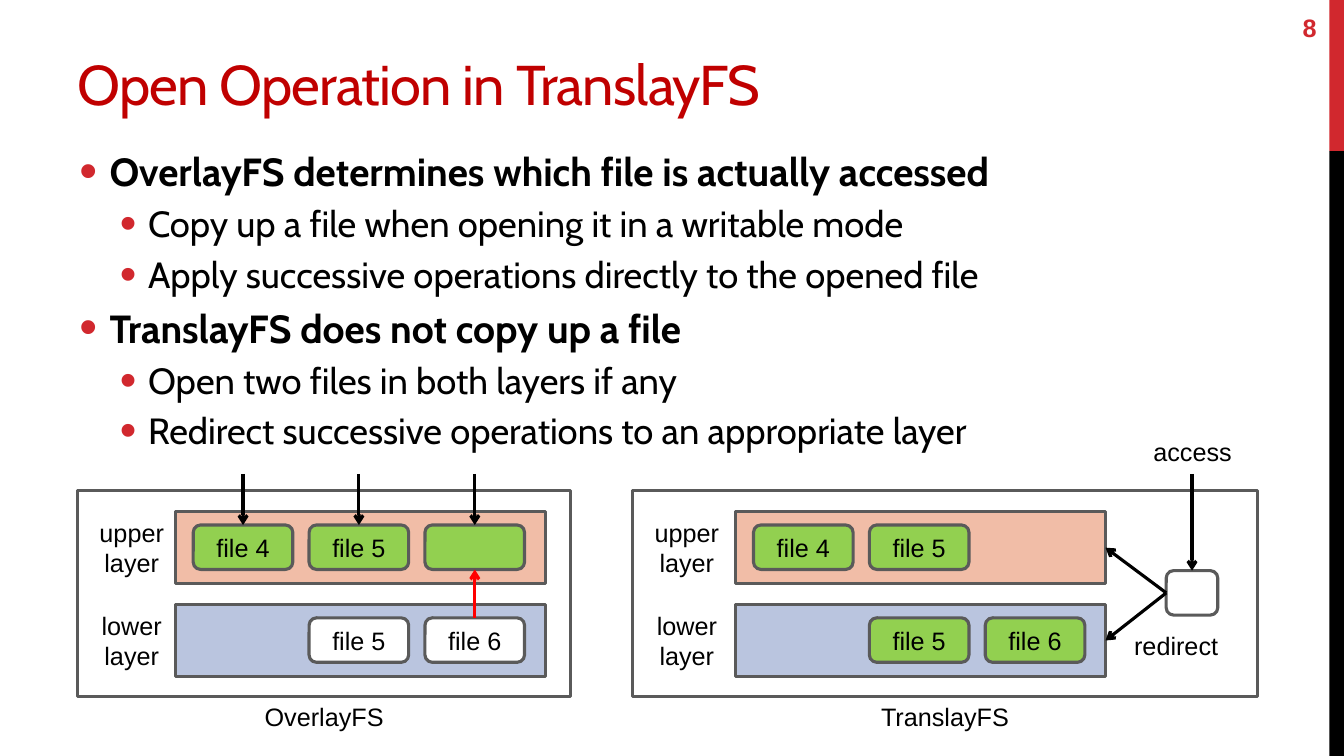
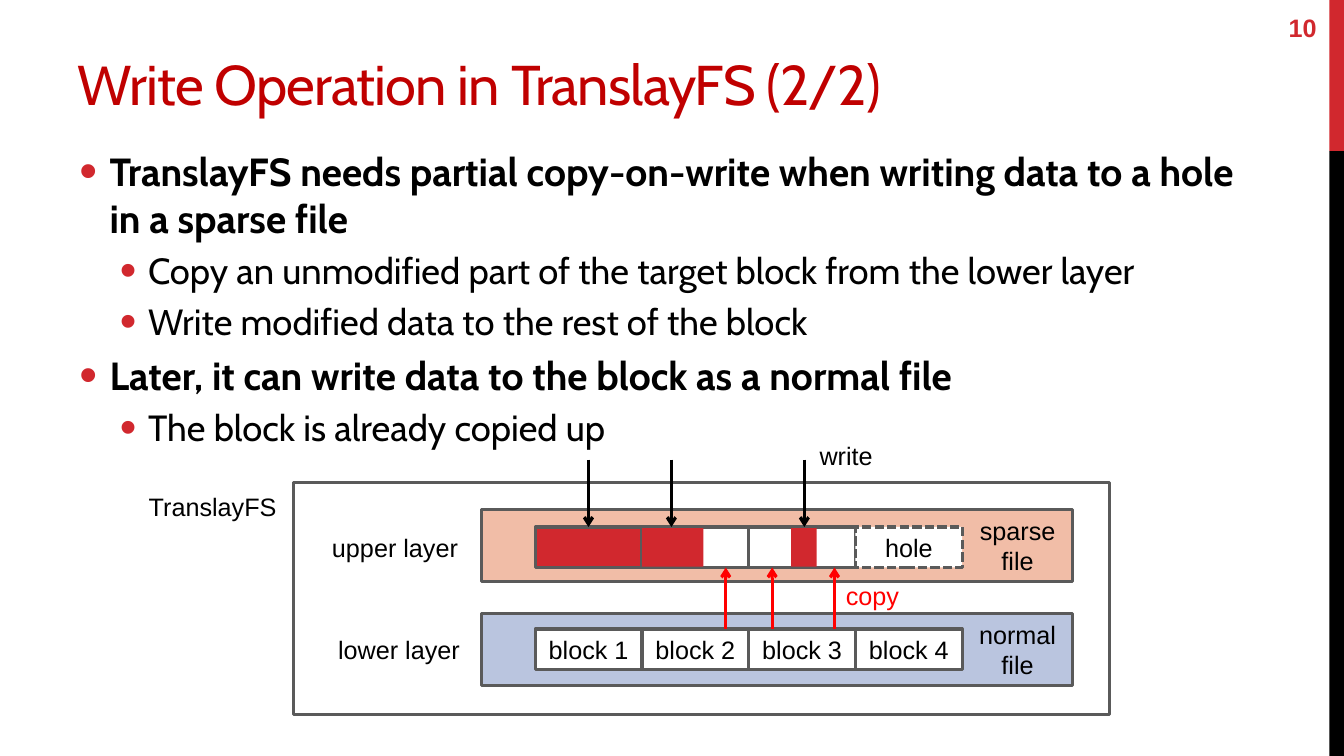
from lxml import etree
from pptx import Presentation
from pptx.dml.color import RGBColor
from pptx.enum.dml import MSO_LINE
from pptx.enum.shapes import MSO_CONNECTOR, MSO_SHAPE
from pptx.enum.text import MSO_ANCHOR, MSO_AUTO_SIZE, PP_ALIGN
from pptx.oxml.ns import qn
from pptx.util import Cm, Pt

RECTANGLE = MSO_SHAPE.RECTANGLE
ROUNDED = MSO_SHAPE.ROUNDED_RECTANGLE
STRAIGHT = MSO_CONNECTOR.STRAIGHT
DASHED = MSO_LINE.SQUARE_DOT
MIDDLE, BOTTOM = MSO_ANCHOR.MIDDLE, MSO_ANCHOR.BOTTOM
CENTER, LEFT, RIGHT = PP_ALIGN.CENTER, PP_ALIGN.LEFT, PP_ALIGN.RIGHT
NO_AUTOFIT = MSO_AUTO_SIZE.NONE

COLORS = {
    "title": "C00000",
    "accent": "D1282E",
    "black": "000000",
    "white": "FFFFFF",
    "outline": "5A5A5A",
    "upper": "F1BDA7",
    "lower": "BAC5DF",
    "file": "92D050",
    "copy": "FF0000",
}
COLORS = {name: RGBColor.from_string(value) for name, value in COLORS.items()}
HEADING_FONT, LABEL_FONT = "Cabin", "Arial"
LINE_WIDTH = Pt(2.25)
LAYER_HEIGHT = 1.8
LABEL_HEIGHT = 1.02

# Per list level: size, bold, space before, text indent, hanging indent
LEVELS = [
    (Pt(28), True, Pt(6), Cm(0.76), Cm(0.76)),
    (Pt(26), False, Pt(5), Cm(1.73), Cm(0.71)),
]

SLIDES = [
    ("8", "Open Operation in TranslayFS", [
        (0, "OverlayFS determines which file is actually accessed"),
        (1, "Copy up a file when opening it in a writable mode"),
        (1, "Apply successive operations directly to the opened file"),
        (0, "TranslayFS does not copy up a file"),
        (1, "Open two files in both layers if any"),
        (1, "Redirect successive operations to an appropriate layer"),
    ]),
    ("10", "Write Operation in TranslayFS (2/2)", [
        (0, "TranslayFS needs partial copy-on-write when writing data to a hole "
            "in a sparse file"),
        (1, "Copy an unmodified part of the target block from the lower layer"),
        (1, "Write modified data to the rest of the block"),
        (0, "Later, it can write data to the block as a normal file"),
        (1, "The block is already copied up"),
    ]),
]


def add_box(slide, left, top, width, height, text="", fill=None,
            outline="outline", kind=RECTANGLE, color="black"):
    """Add a filled shape, or a plain text box when fill is None; lengths in cm."""
    place = Cm(left), Cm(top), Cm(width), Cm(height)
    if fill is None:
        shape = slide.shapes.add_textbox(*place)
    else:
        shape = slide.shapes.add_shape(kind, *place)
        shape.shadow.inherit = False
        shape.fill.solid()
        shape.fill.fore_color.rgb = COLORS[fill]
        if outline:
            shape.line.color.rgb = COLORS[outline]
            shape.line.width = LINE_WIDTH
        else:
            shape.line.fill.background()
    frame = shape.text_frame
    frame.word_wrap = False
    frame.vertical_anchor = MIDDLE
    frame.text = text
    for paragraph in frame.paragraphs:
        paragraph.alignment = CENTER
        for run in paragraph.runs:
            run.font.name = LABEL_FONT
            run.font.size = Pt(18)
            run.font.color.rgb = COLORS[color]
    return shape


def add_arrow(slide, start_x, start_y, end_x, end_y, color="black"):
    connector = slide.shapes.add_connector(
        STRAIGHT, Cm(start_x), Cm(start_y), Cm(end_x), Cm(end_y))
    connector.line.color.rgb = COLORS[color]
    connector.line.width = LINE_WIDTH
    properties = connector.element.spPr
    etree.SubElement(properties.find(qn("a:ln")), qn("a:tailEnd"), type="arrow")
    etree.SubElement(properties, qn("a:effectLst"))


presentation = Presentation()
presentation.slide_width, presentation.slide_height = Cm(33.87), Cm(19.05)

# Shared layout: title and body positions
layout = presentation.slide_layouts[1]
for placeholder in list(layout.placeholders)[2:]:
    layout.shapes.element.remove(placeholder.element)
for placeholder, top, height in zip(layout.placeholders, (0.43, 3.58), (2.64, 14.45)):
    placeholder.left, placeholder.top = Cm(1.7), Cm(top)
    placeholder.width, placeholder.height = Cm(30.53), Cm(height)

# Titles, lists and page numbers
for number, title, items in SLIDES:
    slide = presentation.slides.add_slide(layout)
    frame = slide.shapes.title.text_frame
    frame.text = title
    frame.auto_size = NO_AUTOFIT
    frame.vertical_anchor = BOTTOM
    paragraph = frame.paragraphs[0]
    paragraph.alignment = LEFT
    run = paragraph.runs[0]
    run.font.name, run.font.size = HEADING_FONT, Pt(40)
    run.font.color.rgb = COLORS["title"]
    run.font._element.set("spc", "-60")

    frame = slide.placeholders[1].text_frame
    frame.auto_size = NO_AUTOFIT
    frame.margin_left = frame.margin_right = Cm(0.3)
    frame.text = "\n".join(text for level, text in items)
    for paragraph, (level, text) in zip(frame.paragraphs, items):
        size, bold, space, indent, hanging = LEVELS[level]
        paragraph.level = level
        paragraph.space_before = space
        properties = paragraph._p.get_or_add_pPr()
        properties.set("marL", str(indent))
        properties.set("indent", str(-hanging))
        bullet_color = etree.SubElement(properties, qn("a:buClr"))
        etree.SubElement(bullet_color, qn("a:srgbClr"), val=str(COLORS["accent"]))
        etree.SubElement(properties, qn("a:buSzPct"), val="130000")
        etree.SubElement(properties, qn("a:buFont"), typeface=LABEL_FONT)
        etree.SubElement(properties, qn("a:buChar"), char="•")
        font = paragraph.runs[0].font
        font.name, font.size, font.bold = HEADING_FONT, size, bold
        font.color.rgb = COLORS["black"]

    page_number = add_box(slide, 30.89, 0.18, 2.54, LABEL_HEIGHT, number, color="accent")
    page_number.text_frame.word_wrap = True
    paragraph = page_number.text_frame.paragraphs[0]
    paragraph.alignment = RIGHT
    paragraph.runs[0].font.bold = True

open_slide, write_slide = presentation.slides

# Side bands are drawn on a slide, then moved into the layout
bands = [
    add_box(open_slide, 33.5, 0, 0.37, 3.81, fill="accent", outline=None),
    add_box(open_slide, 33.5, 3.81, 0.37, 15.24, fill="black", outline=None),
]
for band in bands:
    layout.shapes.element.append(band.element)

# Open operation: two file systems with files in their layers
FILE_WIDTH, FILE_HEIGHT, FILE_STEP = 2.51, 1.12, 2.92
FILE_INSET_X, FILE_INSET_Y = 0.45, 0.33
OPEN_LAYERS = [("upper", 12.9), ("lower", 15.24)]
ARROW_TOP = 11.94
# Files: layer row, column, text, fill
SYSTEMS = [
    ("TranslayFS", 15.93, 15.77, 18.54, 16.23, [
        (0, 0, "file 4", "file"), (0, 1, "file 5", "file"),
        (1, 1, "file 5", "file"), (1, 2, "file 6", "file")]),
    ("OverlayFS", 1.96, 12.42, 4.42, 2.24, [
        (0, 0, "file 4", "file"), (0, 1, "file 5", "file"), (0, 2, "", "file"),
        (1, 1, "file 5", "white"), (1, 2, "file 6", "white")]),
]
for name, left, width, layer_left, label_left, files in SYSTEMS:
    add_box(open_slide, left, 12.37, width, 5.18, fill="white")
    add_box(open_slide, left, 17.55, width, LABEL_HEIGHT, name)
    for layer, top in OPEN_LAYERS:
        add_box(open_slide, layer_left, top, 9.32, LAYER_HEIGHT, fill=layer)
        add_box(open_slide, label_left, top, 2.16, LAYER_HEIGHT, f"{layer}\nlayer")
    for row, column, text, fill in files:
        add_box(open_slide, layer_left + FILE_INSET_X + column * FILE_STEP,
                OPEN_LAYERS[row][1] + FILE_INSET_Y, FILE_WIDTH, FILE_HEIGHT,
                text, fill, kind=ROUNDED)

upper_file_top, lower_file_top = [top + FILE_INSET_Y for layer, top in OPEN_LAYERS]
file_centers = [4.42 + FILE_INSET_X + FILE_WIDTH / 2 + column * FILE_STEP
                for column in range(3)]
for center in file_centers:
    add_arrow(open_slide, center, ARROW_TOP, center, upper_file_top)
add_arrow(open_slide, file_centers[2], lower_file_top,
          file_centers[2], upper_file_top + FILE_HEIGHT, "copy")

add_box(open_slide, 29.39, 14.38, 1.3, FILE_HEIGHT, fill="white", kind=ROUNDED)
add_arrow(open_slide, 30.04, ARROW_TOP, 30.04, 14.38)
for layer, top in OPEN_LAYERS:
    add_arrow(open_slide, 29.39, 14.94, 27.86, top + LAYER_HEIGHT / 2)
add_box(open_slide, 28.32, 15.75, 2.64, LABEL_HEIGHT, "redirect")
add_box(open_slide, 28.8, 10.87, 2.51, LABEL_HEIGHT, "access")

# Write operation: blocks of a sparse file above those of a normal file
BLOCK_LEFT, BLOCK_WIDTH, BLOCK_HEIGHT = 13.49, 2.69, 1.02
UPPER_BLOCK_TOP, LOWER_BLOCK_TOP = 13.28, 15.85
add_box(write_slide, 7.39, 12.17, 20.57, 5.84, fill="white")
add_box(write_slide, 3.48, 12.24, 3.76, LABEL_HEIGHT, "TranslayFS")
WRITE_LAYERS = [
    ("upper", 12.85, 8.1, UPPER_BLOCK_TOP, "sparse"),
    ("lower", 15.47, 8.2, LOWER_BLOCK_TOP, "normal"),
]
for layer, top, label_left, label_top, file_kind in WRITE_LAYERS:
    add_box(write_slide, 12.14, top, 14.88, LAYER_HEIGHT, fill=layer)
    add_box(write_slide, label_left, label_top, 3.71, LABEL_HEIGHT, f"{layer} layer")
    add_box(write_slide, 24.42, top, 2.45, LAYER_HEIGHT, f"{file_kind}\nfile")

upper_blocks = [("", "accent"), ("", "white"), ("", "white"), ("hole", "white")]
for index, (text, fill) in enumerate(upper_blocks):
    left = BLOCK_LEFT + index * BLOCK_WIDTH
    add_box(write_slide, left, LOWER_BLOCK_TOP, BLOCK_WIDTH, BLOCK_HEIGHT,
            f"block {index + 1}", "white")
    block = add_box(write_slide, left, UPPER_BLOCK_TOP, BLOCK_WIDTH, BLOCK_HEIGHT,
                    text, fill)
    if text == "hole":
        block.line.dash_style = DASHED

for left, width in [(16.18, 1.55), (19.94, 0.64)]:
    add_box(write_slide, left, 13.31, width, 0.97, fill="accent", outline=None)
for x in (18.29, 19.46, 21.03):
    add_arrow(write_slide, x, LOWER_BLOCK_TOP, x, UPPER_BLOCK_TOP + BLOCK_HEIGHT, "copy")
for x in (14.83, 16.92, 20.27):
    add_arrow(write_slide, x, 11.58, x, UPPER_BLOCK_TOP)
add_box(write_slide, 21.06, 14.5, 1.85, LABEL_HEIGHT, "copy", color="copy")
add_box(write_slide, 20.4, 10.97, 1.85, LABEL_HEIGHT, "write")

presentation.save("out.pptx")
